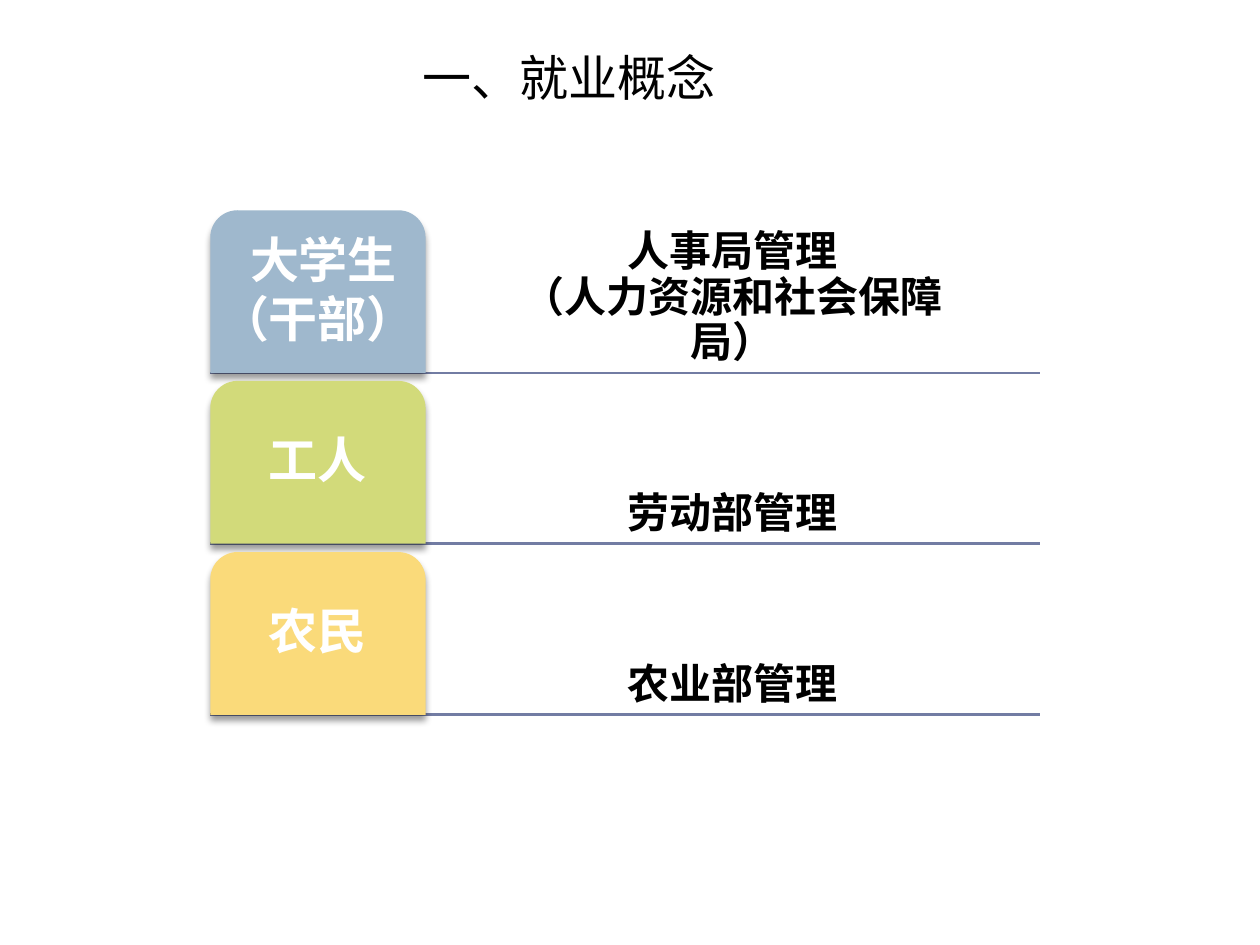
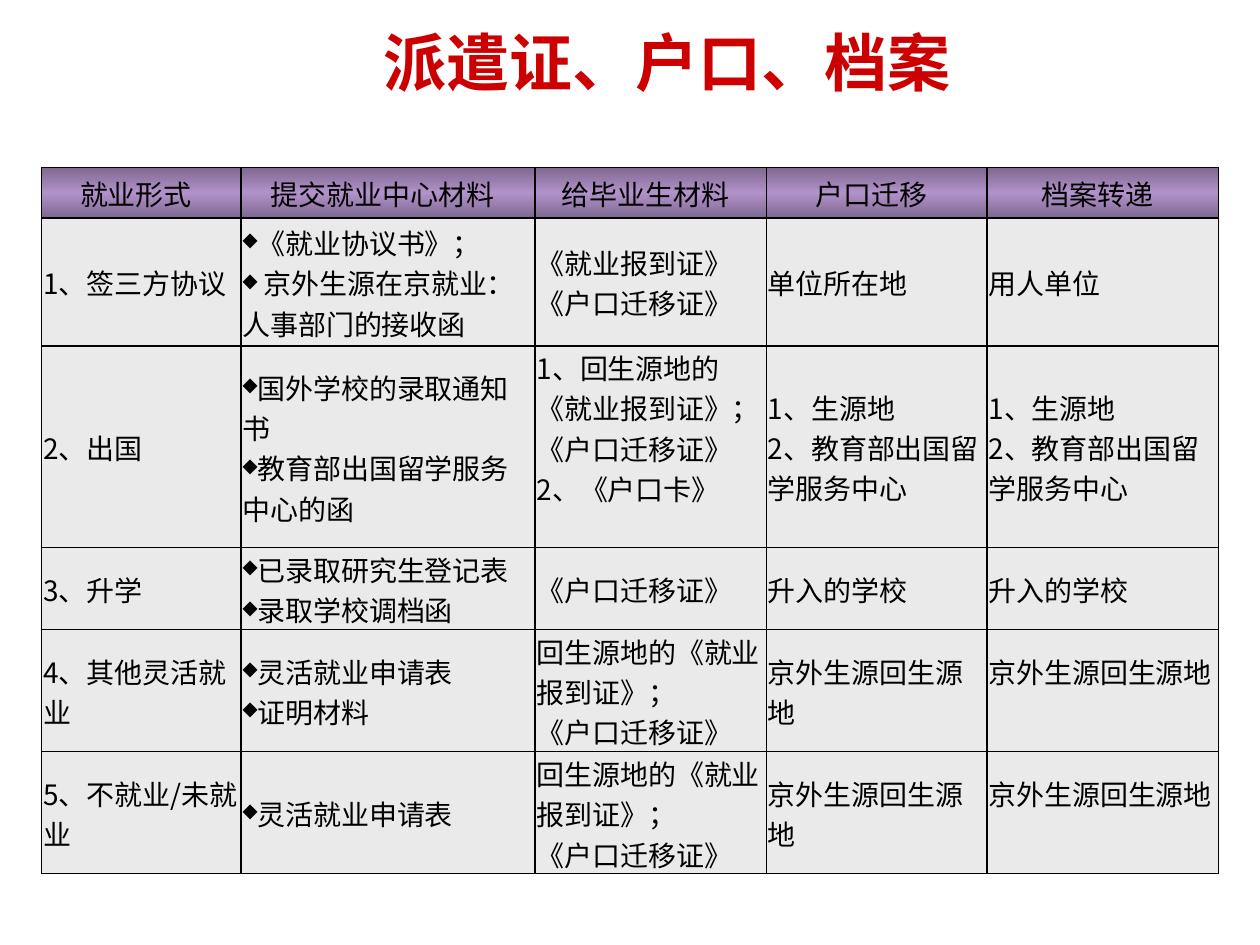
from dataclasses import dataclass

from pptx import Presentation
from pptx.dml.color import RGBColor
from pptx.enum import shapes, text
from pptx.oxml import parse_xml
from pptx.oxml.ns import nsdecls, qn
from pptx.util import Cm, Pt


@dataclass(frozen=True)
class Theme:
    ink: str = "000000"
    white: str = "FFFFFF"
    red: str = "CC0000"
    rule: str = "727CA3"
    tabs: tuple = ("9FB8CD", "D2DA7A", "FADA7A")
    dark: str = "7F6890"
    light: str = "B292CA"
    pale: str = "EAEAEA"
    latin: str = "Arial"
    cjk: str = "Noto Sans CJK SC"
    head: int = 36
    large: int = 28
    note: int = 24
    body: int = 16


T = Theme()
MID = text.PP_ALIGN.CENTER
LOW = text.MSO_ANCHOR.BOTTOM
HALF = text.MSO_ANCHOR.MIDDLE

GROUPS = [
    ([" 大学生", "（干部）"], ["人事局管理", "（人力资源和社会保障局）"], 3.88, 3.87),
    (["工人"], ["劳动部管理"], 4.33, 2.96),
    (["农民"], ["农业部管理"], 4.33, 2.96),
]

WIDTHS = [4.02, 5.93, 4.66, 4.45, 4.66]
HEIGHTS = [1.01, 2.58, 4.07, 1.65, 2.46, 2.46]
HEADS = ["就业形式", "提交就业中心材料", "给毕业生材料", "户口迁移", "档案转递"]
ABROAD = ["1、生源地", "2、教育部出国留学服务中心"]
PERMIT = ["回生源地的《就业报到证》；", "《户口迁移证》"]
ORIGIN = ["京外生源回生源地"]
ROWS = [
    [["1、签三方协议"],
     ["《就业协议书》；", " 京外生源在京就业：人事部门的接收函"],
     ["《就业报到证》《户口迁移证》"], ["单位所在地"], ["用人单位"]],
    [["2、出国"],
     ["国外学校的录取通知书", "教育部出国留学服务中心的函"],
     ["1、回生源地的《就业报到证》；", "《户口迁移证》", "2、《户口卡》"],
     ABROAD, ABROAD],
    [["3、升学"], ["已录取研究生登记表", "录取学校调档函"],
     ["《户口迁移证》"], ["升入的学校"], ["升入的学校"]],
    [["4、其他灵活就业"], ["灵活就业申请表", "证明材料"], PERMIT, ORIGIN, ORIGIN],
    [["5、不就业/未就业"], ["灵活就业申请表"], PERMIT, ORIGIN, ORIGIN],
]
RAISED = {(2, 2), (4, 4), (5, 4)}  # row, column of cells set above the middle


def inch(n):
    return Cm(round(n * 2.54, 2))


def rgb(tone):
    return RGBColor.from_string(tone)


def write(frame, lines, size=T.body, tone=T.ink, font=T.cjk, bold=False,
          align=None, lead=None, gap=0, mark=None):
    """Fill a text frame with one paragraph for each line."""
    for i, line in enumerate(lines):
        para = frame.paragraphs[0] if i == 0 else frame.add_paragraph()
        if mark:
            props = para._p.get_or_add_pPr()
            props.append(parse_xml(f'<a:buSzPct {nsdecls("a")} val="70000"/>'))
            props.append(parse_xml(f'<a:buChar {nsdecls("a")} char="{mark}"/>'))
        if align is not None:
            para.alignment = align
        if lead:
            para.line_spacing = lead
        if gap and i:
            para.space_before = Pt(gap)
        run = para.add_run()
        run.text = line
        run.font.size, run.font.bold, run.font.name = Pt(size), bold, font
        run.font.color.rgb = rgb(tone)
        run._r.get_or_add_rPr().append(
            parse_xml(f'<a:ea {nsdecls("a")} typeface="{T.cjk}"/>'))


def inset(frame, left, top, right, low):
    frame.margin_left, frame.margin_top = Cm(left), Cm(top)
    frame.margin_right, frame.margin_bottom = Cm(right), Cm(low)


def label(slide, box, lines, anchor=text.MSO_ANCHOR.TOP, pad=None, **form):
    frame = slide.shapes.add_textbox(*map(inch, box)).text_frame
    frame.word_wrap = True
    frame.vertical_anchor = anchor
    if pad is not None:
        inset(frame, pad, pad, pad, pad)
    write(frame, lines, **form)


def rule(slide, left, right, top):
    line = slide.shapes.add_connector(
        shapes.MSO_CONNECTOR.STRAIGHT, inch(left), inch(top), inch(right), inch(top))
    line.line.color.rgb = rgb(T.rule)
    line.line.width = Pt(1.5)
    line._element.spPr.append(parse_xml(f'<a:effectLst {nsdecls("a")}/>'))


def tab(slide, box, lines, tone):
    """Draw a round-topped block with a soft shadow below it."""
    shape = slide.shapes.add_shape(
        shapes.MSO_SHAPE.ROUND_2_SAME_RECTANGLE, *map(inch, box))
    shape.adjustments[0], shape.adjustments[1] = 0.167, 0
    shape.fill.solid()
    shape.fill.fore_color.rgb = rgb(tone)
    shape.line.fill.background()
    shape.shadow.inherit = False
    shape._element.spPr.find(qn("a:effectLst")).append(parse_xml(
        f'<a:outerShdw {nsdecls("a")} blurRad="{Pt(4)}" dist="{Pt(3.4)}" '
        f'dir="5400000" rotWithShape="0"><a:srgbClr val="{T.ink}">'
        '<a:alpha val="40000"/></a:srgbClr></a:outerShdw>'))
    frame = shape.text_frame
    frame.word_wrap = False
    frame.vertical_anchor = HALF
    inset(frame, 0, 0, 0, 0.16)
    write(frame, lines, size=T.large, tone=T.white, font=T.latin, bold=True,
          align=MID, lead=0.9, gap=3.5)


def edge(cell):
    props = cell._tc.get_or_add_tcPr()
    for side in ("lnL", "lnR", "lnT", "lnB"):
        props.append(parse_xml(
            f'<a:{side} {nsdecls("a")} w="{Pt(1)}"><a:solidFill>'
            f'<a:srgbClr val="{T.ink}"/></a:solidFill></a:{side}>'))


def shade(cell):
    """Fill a heading cell with a dark, light, dark blend."""
    stops = "".join(
        f'<a:gs pos="{at}"><a:srgbClr val="{tone}"/></a:gs>'
        for at, tone in ((0, T.dark), (50000, T.light), (100000, T.dark)))
    cell._tc.get_or_add_tcPr().append(parse_xml(
        f'<a:gradFill {nsdecls("a")}><a:gsLst>{stops}</a:gsLst>'
        '<a:lin ang="5400000" scaled="0"/></a:gradFill>'))


def grid(slide, left, top):
    table = slide.shapes.add_table(
        len(HEIGHTS), len(WIDTHS), inch(left), inch(top),
        Cm(sum(WIDTHS)), Cm(sum(HEIGHTS))).table
    table.horz_banding = False
    for col, width in zip(table.columns, WIDTHS):
        col.width = Cm(width)
    for row, height in zip(table.rows, HEIGHTS):
        row.height = Cm(height)
    for r, row in enumerate([[[head] for head in HEADS]] + ROWS):
        for c, lines in enumerate(row):
            cell = table.cell(r, c)
            cell.vertical_anchor = HALF
            inset(cell, 0.03, 0.03, 0.03 if r else 0.25,
                  0.8 if (r, c) in RAISED else 0)
            edge(cell)
            if r:
                cell.fill.solid()
                cell.fill.fore_color.rgb = rgb(T.pale)
                write(cell.text_frame, lines, mark="◆" if c == 1 else None)
            else:
                shade(cell)
                write(cell.text_frame, lines, align=MID)


def concept(slide):
    left, top, wide, high, step = 1.67, 1.67, 1.71, 1.29, 1.355
    tops = [top + i * step for i in range(len(GROUPS))]
    for y in tops:
        rule(slide, left, 8.25, y + high)
    for y, tone, (names, notes, x, width) in zip(tops, T.tabs, GROUPS):
        label(slide, (x, y, width, high), notes, LOW, 0.13, size=T.note,
              font=T.latin, bold=True, align=MID, lead=0.9)
        tab(slide, (left, y, wide, high), names, tone)
    label(slide, (3.25, 0.33, 4.75, 0.57), ["一、就业概念"],
          size=T.large, font=T.latin)


def papers(slide):
    label(slide, (2.33, 0.17, 5.92, 0.67), ["派遣证、户口、档案"], LOW,
          size=T.head, tone=T.red, bold=True, align=MID)
    grid(slide, 0.33, 1.33)


def main():
    deck = Presentation()
    deck.slide_width, deck.slide_height = Cm(25.4), Cm(19.05)
    for build in (concept, papers):
        build(deck.slides.add_slide(deck.slide_layouts[6]))
    deck.save("out.pptx")


if __name__ == "__main__":
    main()
